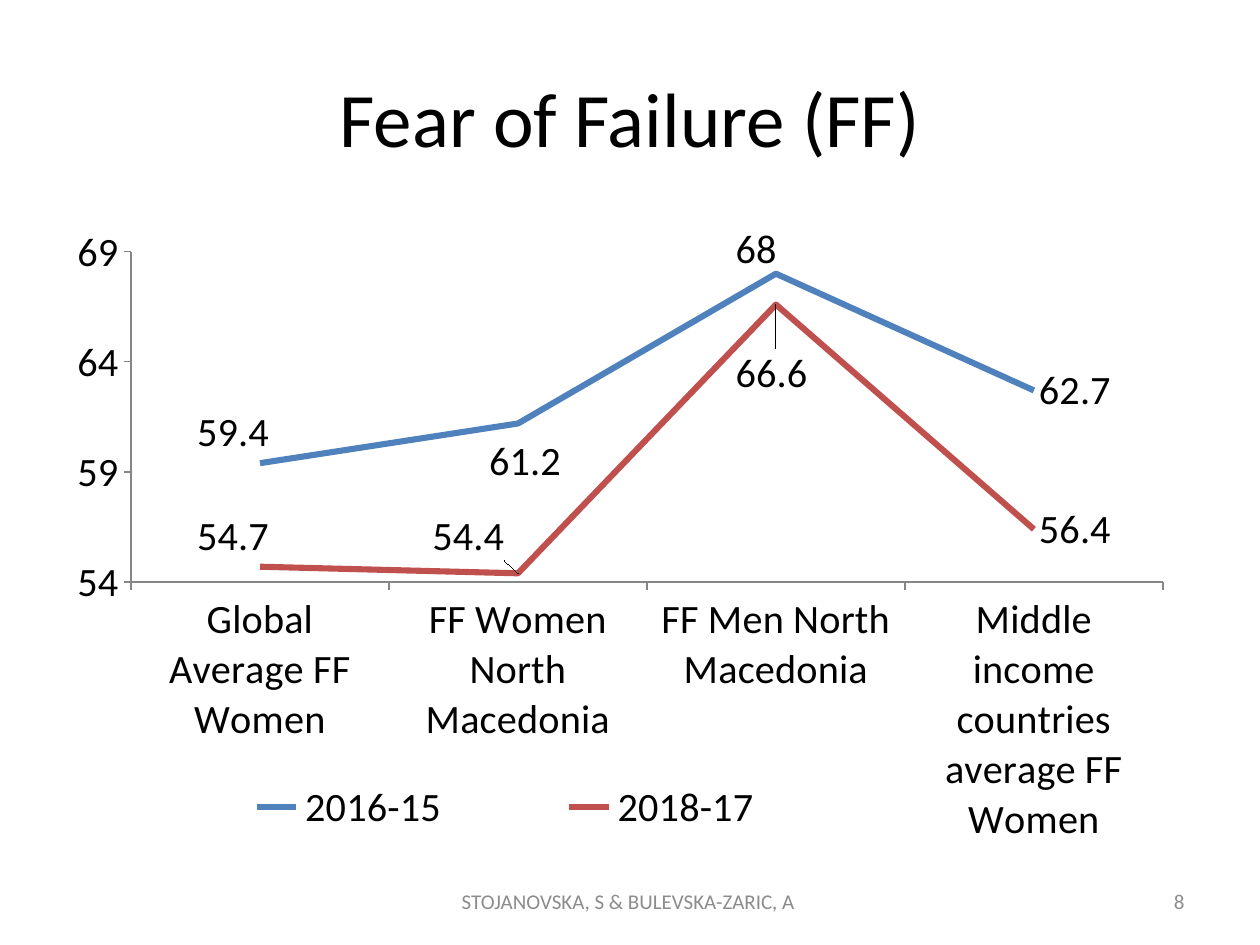
from lxml import etree
from pptx import Presentation
from pptx.chart.data import CategoryChartData
from pptx.dml.color import RGBColor
from pptx.enum.chart import (XL_CHART_TYPE, XL_LABEL_POSITION, XL_LEGEND_POSITION,
                             XL_MARKER_STYLE, XL_TICK_MARK)
from pptx.enum.text import MSO_ANCHOR, PP_ALIGN
from pptx.oxml.ns import qn
from pptx.util import Inches, Pt

LINE, NO_MARK = XL_CHART_TYPE.LINE, XL_MARKER_STYLE.NONE
BESIDE, OUT = XL_LABEL_POSITION.RIGHT, XL_TICK_MARK.OUTSIDE
LEGEND_SIDE = XL_LEGEND_POSITION.RIGHT
MIDDLE, CENTER, RIGHT = MSO_ANCHOR.MIDDLE, PP_ALIGN.CENTER, PP_ALIGN.RIGHT
BLACK, GRAY = RGBColor(0, 0, 0), RGBColor(0x8C, 0x8C, 0x8C)
AXIS = RGBColor(0x86, 0x86, 0x86)
BLUE, RED = RGBColor(0x4F, 0x81, 0xBD), RGBColor(0xC0, 0x50, 0x4D)
FONT = "Calibri"

# Content: text, box, size, colour, alignment
TEXTS = [
    ("Fear of Failure (FF)", (0.5, 0.3, 9, 1.25), 44, BLACK, CENTER),
    ("STOJANOVSKA, S & BULEVSKA-ZARIC, A ", (3.42, 6.95, 3.17, 0.4), 12, GRAY, CENTER),
    ("8", (7.17, 6.95, 2.33, 0.4), 12, GRAY, RIGHT),
]
GROUPS = ["Global Average FF Women", "FF Women North Macedonia",
          "FF Men North Macedonia", "Middle income countries average FF Women"]
# Name, values, colour, label shifts as shares of the chart's size
SERIES = [
    ("2016-15", (59.4, 61.2, 68, 62.7), BLUE,
     [(-0.06, -0.05), (-0.03, 0.06), (-0.04, -0.04)]),
    ("2018-17", (54.7, 54.4, 66.6, 56.4), RED,
     [(-0.06, -0.05), (-0.08, -0.06), (-0.04, 0.11)]),
]
CHART_BOX = (0.5, 1.75, 9, 4.95)
PLOT = {"layoutTarget": "inner", "xMode": "edge", "yMode": "edge",
        "x": 0.06, "y": 0.05, "w": 0.91, "h": 0.53}
LEGEND = {"xMode": "edge", "yMode": "edge", "x": 0.07, "y": 0.89, "w": 0.64, "h": 0.1}


def place(part, spot, rules):
    """Give a chart part a manual layout as its child number spot."""
    for old in part.findall(qn("c:layout")):
        part.remove(old)
    layout = etree.Element(qn("c:layout"))
    manual = etree.SubElement(layout, qn("c:manualLayout"))
    for name, val in rules.items():
        etree.SubElement(manual, qn("c:" + name)).set("val", str(val))
    part.insert(spot, layout)


def add_text(slide, text, box, size, color, align):
    frame = slide.shapes.add_textbox(*map(Inches, box)).text_frame
    frame.word_wrap = True
    frame.vertical_anchor = MIDDLE
    para = frame.paragraphs[0]
    para.alignment = align
    run = para.add_run()
    run.text = text
    run.font.name, run.font.size = FONT, Pt(size)
    run.font.color.rgb = color


def add_lines(slide):
    data = CategoryChartData()
    data.categories = GROUPS
    for name, vals, _, _ in SERIES:
        data.add_series(name, vals)
    chart = slide.shapes.add_chart(LINE, *map(Inches, CHART_BOX), data).chart
    chart.has_title = False
    chart.font.name, chart.font.size = FONT, Pt(23)
    chart.font.color.rgb = BLACK
    plot = chart.plots[0]
    plot.vary_by_categories = False

    # Axes
    for axis in (chart.category_axis, chart.value_axis):
        axis.has_major_gridlines = False
        axis.major_tick_mark = OUT
        axis.format.line.color.rgb = AXIS
        axis.format.line.width = Pt(0.75)
    scale = chart.value_axis
    scale.minimum_scale, scale.maximum_scale, scale.major_unit = 54, 69, 5

    # Lines and their labels
    for line, (_, _, color, shifts) in zip(plot.series, SERIES):
        line.smooth = False
        line.marker.style = NO_MARK
        line.format.line.color.rgb = color
        line.format.line.width = Pt(3.5)
        line.data_labels.show_value = True
        line.data_labels.position = BESIDE
        for i in range(len(shifts)):
            line.points[i].data_label.position = BESIDE
        labels = line.data_labels._element.findall(qn("c:dLbl"))
        for label, (x, y) in zip(labels, shifts):
            place(label, 1, {"x": x, "y": y})

    # Legend and plot area
    chart.has_legend = True
    chart.legend.position = LEGEND_SIDE
    chart.legend.include_in_layout = False
    place(chart.legend._element, 1, LEGEND)
    place(chart._chartSpace.chart.plotArea, 0, PLOT)


def main():
    deck = Presentation()
    deck.slide_width, deck.slide_height = Inches(10), Inches(7.5)
    slide = deck.slides.add_slide(deck.slide_layouts[6])
    for item in TEXTS:
        add_text(slide, *item)
    add_lines(slide)
    deck.save("out.pptx")


if __name__ == "__main__":
    main()
